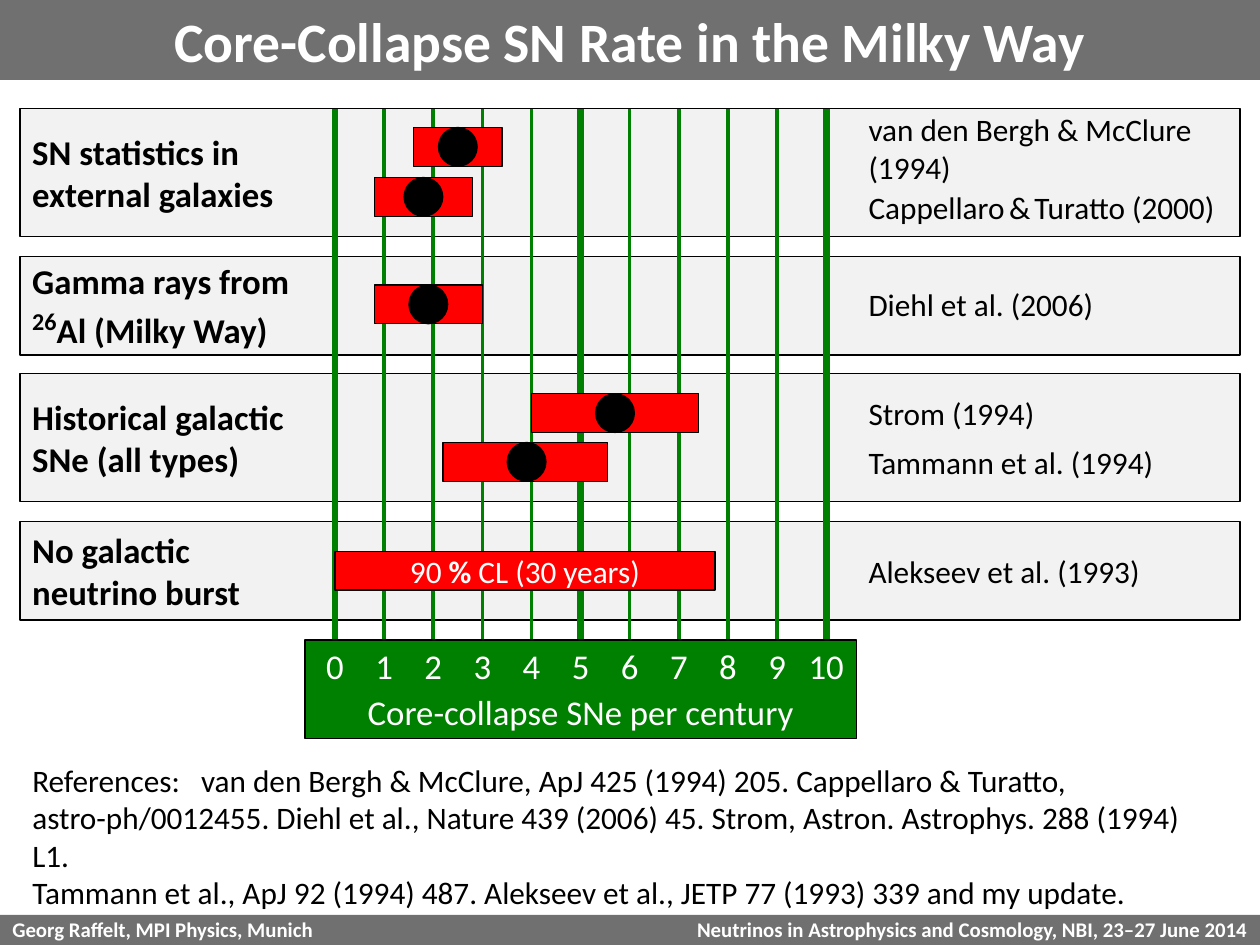
"""Build the slide on core-collapse supernova rates in the Milky Way."""
import pptx
import pptx.util
import pptx.dml.color
import pptx.enum.shapes
import pptx.enum.text
import pptx.oxml.ns
import lxml.etree

Inches = pptx.util.Inches
Pt = pptx.util.Pt
RGBColor = pptx.dml.color.RGBColor
Shape = pptx.enum.shapes.MSO_SHAPE
Align = pptx.enum.text.PP_ALIGN
Anchor = pptx.enum.text.MSO_ANCHOR
qn = pptx.oxml.ns.qn

WHITE = RGBColor(255, 255, 255)
BLACK = RGBColor(0, 0, 0)
GREY = RGBColor(0x70, 0x70, 0x70)
PALE = RGBColor(0xF2, 0xF2, 0xF2)
GREEN = RGBColor(0, 0x80, 0)
RED = RGBColor(255, 0, 0)

deck = pptx.Presentation()
deck.slide_width = Inches(10.08)
deck.slide_height = Inches(7.56)
slide = deck.slides.add_slide(deck.slide_layouts[6])


def draw(home, box, fill, edge=True, kind=Shape.RECTANGLE):
    shape = home.add_shape(kind, *map(Inches, box))
    shape.shadow.inherit = False
    shape.fill.solid()
    shape.fill.fore_color.rgb = fill
    if edge:
        shape.line.color.rgb = BLACK
        shape.line.width = Pt(0.75)
    else:
        shape.line.fill.background()
    return shape


def write(shape, lines, size, color=BLACK, bold=False, align=Align.LEFT,
          anchor=Anchor.MIDDLE, foot=0.05):
    frame = shape.text_frame
    layout = {"word_wrap": False, "vertical_anchor": anchor,
              "margin_left": Inches(0.1), "margin_right": Inches(0.1),
              "margin_top": Inches(0.05), "margin_bottom": Inches(foot)}
    for key, value in layout.items():
        setattr(frame, key, value)
    for i, line in enumerate(lines):
        para = frame.paragraphs[0] if i == 0 else frame.add_paragraph()
        para.alignment = align
        for part in [(line, {})] if isinstance(line, str) else line:
            text, change = part
            run = para.add_run()
            run.text = text
            run.font.color.rgb = color
            style = {"name": "Calibri", "size": Pt(size), "bold": bold} | change
            for key, value in style.items():
                setattr(run.font, key, value)


shapes = slide.shapes
bar = draw(shapes, (0, 7.32, 10.08, 0.24), GREY, edge=False)
write(bar, ["Georg Raffelt, MPI Physics, Munich"], 12, WHITE, True, foot=0.07)
event = shapes.add_textbox(*map(Inches, (5.04, 7.32, 5.04, 0.24)))
write(event, ["Neutrinos in Astrophysics and Cosmology, NBI, 23–27 June 2014"],
      12, WHITE, True, Align.RIGHT, foot=0.07)
title = draw(shapes, (0, 0, 10.08, 0.64), GREY, edge=False)
write(title, ["Core-Collapse SN Rate in the Milky Way"], 32, WHITE, True, Align.CENTER)

notes = shapes.add_textbox(*map(Inches, (0.16, 6.22, 9.69, 0.94)))
write(notes, [
    "References:\tvan den Bergh & McClure, ApJ 425 (1994) 205. Cappellaro & Turatto,",
    "astro-ph/0012455. Diehl et al., Nature 439 (2006) 45. "
    "Strom, Astron. Astrophys. 288 (1994) L1.",
    "Tammann et al., ApJ 92 (1994) 487. Alekseev et al., "
    "JETP 77 (1993) 339 and my update."], 18)
props = notes.text_frame.paragraphs[0]._p.get_or_add_pPr()
tabs = lxml.etree.SubElement(props, qn("a:tabLst"))
lxml.etree.SubElement(tabs, qn("a:tab"), pos=str(Inches(1.35)), algn="l")

panels = [
    (0.87, 1.02, ["SN statistics in", "external galaxies"]),
    (2.05, 0.79, ["Gamma rays from",
                  [("26", {"size": Pt(24)}), ("Al (Milky Way)", {})]]),
    (2.99, 1.02, ["Historical galactic", "SNe (all types)"]),
    (4.17, 0.79, ["No galactic", "neutrino burst"]),
]
for top, height, label in panels:
    panel = draw(shapes, (0.16, top, 9.76, height), PALE)
    write(panel, label, 20, bold=True)
    for para in panel.text_frame.paragraphs:
        for run in para.runs:
            if run.text == "26":
                run._r.get_or_add_rPr().set("baseline", "30000")

ZERO, STEP = 2.68, 0.393
grid = shapes.add_group_shape().shapes
for rate in range(11):
    x = Inches(ZERO + rate * STEP)
    rule = grid.add_connector(pptx.enum.shapes.MSO_CONNECTOR.STRAIGHT,
                              x, Inches(0.87), x, Inches(5.12))
    rule.line.color.rgb = GREEN
    rule.line.width = Pt(2 if rate % 5 else 4)
    lxml.etree.SubElement(rule._element.spPr, qn("a:effectLst"))

scale = draw(shapes, (2.44, 5.12, 4.41, 0.79), GREEN)
write(scale, ["Core-collapse SNe per century"], 20, WHITE,
      align=Align.CENTER, anchor=Anchor.BOTTOM)
for rate in range(11):
    mark = shapes.add_textbox(
        *map(Inches, (ZERO + rate * STEP - 0.24, 5.13, 0.48, 0.39)))
    write(mark, [str(rate)], 20, WHITE, align=Align.CENTER)

DOT = 0.31
rates = [
    (1.02, 1.6, 2.5, 3.4),
    (1.42, 0.8, 1.8, 2.8),
    (2.28, 0.8, 1.9, 3),
    (3.15, 4, 5.7, 7.4),
    (3.54, 2.2, 3.9, 5.55),
]
for top, low, mid, high in rates:
    pair = shapes.add_group_shape().shapes
    draw(pair, (ZERO + low * STEP, top, (high - low) * STEP, DOT), RED)
    draw(pair, (ZERO + mid * STEP - DOT / 2, top, DOT, DOT), BLACK, kind=Shape.OVAL)

limit = draw(shapes, (ZERO, 4.41, 3.04, DOT), RED)
write(limit, [[("90 ", {}), ("%", {"bold": True}), (" CL (30 years)", {})]],
      18, WHITE, align=Align.CENTER)

papers = [
    (0.87, 0.63, ["van den Bergh & McClure", "(1994)"]),
    (1.5, DOT, [[("Cappellaro", {}), (" ", {"size": Pt(11)}), ("&", {}),
                 (" ", {"size": Pt(10.5)}), ("Turatto (2000)", {})]]),
    (2.28, DOT, ["Diehl et al. (2006)"]),
    (3.15, DOT, ["Strom (1994)"]),
    (3.54, DOT, ["Tammann et al. (1994)"]),
    (4.41, DOT, ["Alekseev et al. (1993)"]),
]
for top, height, lines in papers:
    paper = shapes.add_textbox(*map(Inches, (6.85, top, 3.07, height)))
    write(paper, lines, 18)

deck.save("out.pptx")
